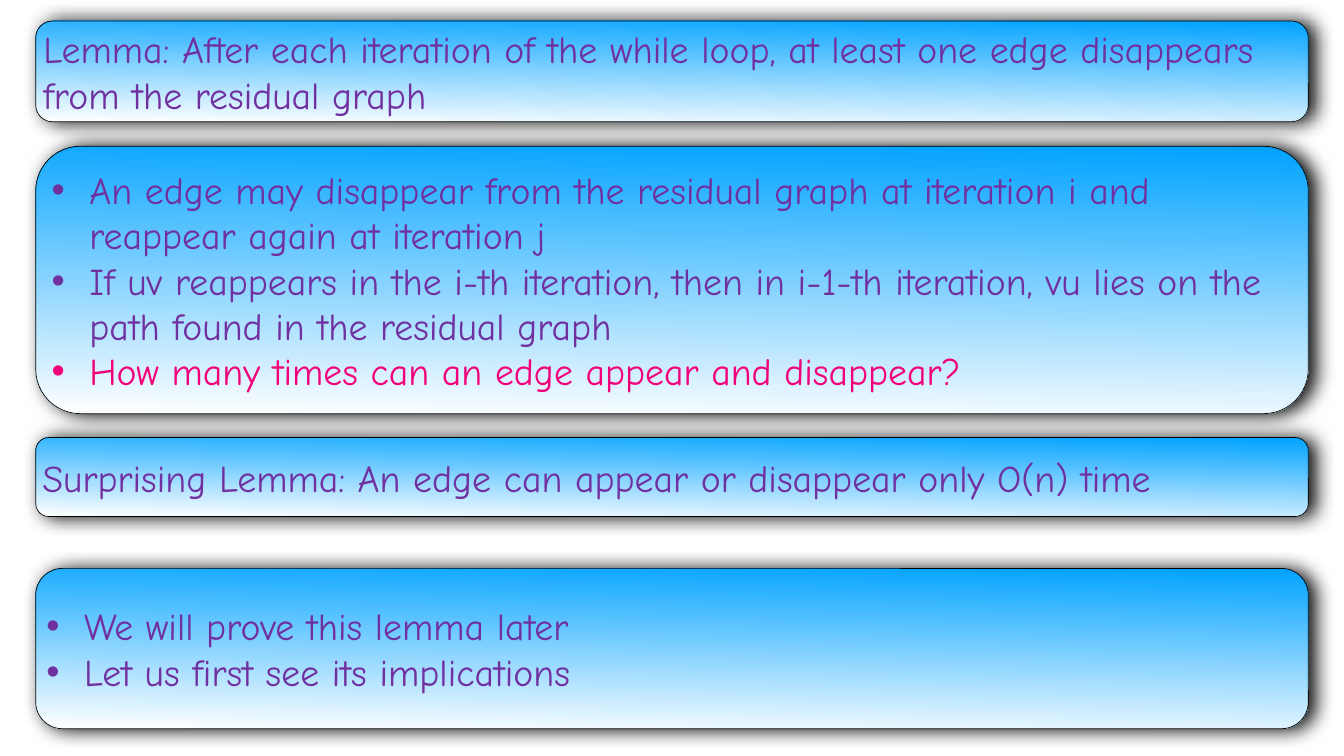
from dataclasses import dataclass

from lxml.etree import SubElement
from pptx import Presentation
from pptx.dml.color import RGBColor
from pptx.enum.shapes import MSO_SHAPE as Preset
from pptx.enum.text import MSO_ANCHOR as Anchor, PP_ALIGN as Align
from pptx.oxml.ns import qn
from pptx.util import Pt


@dataclass(frozen=True)
class Theme:
    """Colours, font and sizes of the slide."""
    font: str = "Comic Neue"
    size: Pt = Pt(54)
    text: RGBColor = RGBColor.from_string("7030A0")
    question: RGBColor = RGBColor.from_string("F10079")
    top: RGBColor = RGBColor.from_string("00A2FF")
    bottom: RGBColor = RGBColor.from_string("FFFFFF")
    outline: RGBColor = RGBColor.from_string("000000")
    inset: Pt = Pt(4)
    indent: Pt = Pt(54)


THEME = Theme()
LEFT, WIDTH = Pt(51), Pt(1818)


def add_shadow(shape):
    """Give the shape a soft dark shadow to its right."""
    shape.shadow.inherit = False
    effects = shape._element.spPr.find(qn("a:effectLst"))
    shadow = SubElement(effects, qn("a:outerShdw"), blurRad=str(Pt(28)),
                        dist=str(Pt(9)), dir="0", rotWithShape="0")
    colour = SubElement(shadow, qn("a:srgbClr"), val=str(THEME.outline))
    SubElement(colour, qn("a:alpha"), val="97000")


def add_panel(slide, top, height):
    """Add a rounded gradient panel and return its text frame."""
    shape = slide.shapes.add_shape(Preset.ROUNDED_RECTANGLE, LEFT, top, WIDTH, height)
    shape.fill.gradient()
    shape.fill.gradient_angle = 269
    for stop, colour in zip(shape.fill.gradient_stops, (THEME.top, THEME.bottom)):
        stop.color.rgb = colour
    shape.line.color.rgb = THEME.outline
    shape.line.width = Pt(1)
    add_shadow(shape)
    frame = shape.text_frame
    frame.word_wrap = True
    frame.vertical_anchor = Anchor.MIDDLE
    frame.margin_left = frame.margin_right = THEME.inset
    frame.margin_top = frame.margin_bottom = THEME.inset
    return frame


def add_text(paragraph, text, colour=THEME.text):
    """Add one left-aligned run in the theme font."""
    paragraph.alignment = Align.LEFT
    run = paragraph.add_run()
    run.text = text
    run.font.name = THEME.font
    run.font.size = THEME.size
    run.font.color.rgb = colour


def add_lemma(slide, top, height, text):
    """Add a panel that states a lemma."""
    add_text(add_panel(slide, top, height).paragraphs[0], text)


def add_bullets(slide, top, height, items):
    """Add a panel with a bulleted list of text and colour pairs."""
    frame = add_panel(slide, top, height)
    for index, (text, colour) in enumerate(items):
        paragraph = frame.add_paragraph() if index else frame.paragraphs[0]
        properties = paragraph._p.get_or_add_pPr()
        properties.set("marL", str(THEME.indent))
        properties.set("indent", str(-THEME.indent))
        SubElement(properties, qn("a:buFont"), typeface="Arial")
        SubElement(properties, qn("a:buChar"), char="•")
        add_text(paragraph, text, colour)


def main():
    """Build the slide and save it."""
    presentation = Presentation()
    presentation.slide_width, presentation.slide_height = Pt(1920), Pt(1080)
    slide = presentation.slides.add_slide(presentation.slide_layouts[6])
    add_lemma(slide, Pt(30), Pt(144),
              "Lemma: After each iteration of the while loop, at least one edge "
              "disappears from the residual graph")
    add_bullets(slide, Pt(209), Pt(382), [
        ("An edge may disappear from the residual graph at iteration i and "
         "reappear again at iteration j", THEME.text),
        ("If uv reappears in the i-th iteration, then in i-1-th iteration, "
         "vu lies on the path found in the residual graph", THEME.text),
        ("How many times can an edge appear and disappear?", THEME.question),
    ])
    add_lemma(slide, Pt(625), Pt(113),
              "Surprising Lemma: An edge can appear or disappear only O(n) time")
    add_bullets(slide, Pt(812), Pt(229), [
        ("We will prove this lemma later", THEME.text),
        ("Let us first see its implications", THEME.text),
    ])
    presentation.save("out.pptx")


if __name__ == "__main__":
    main()
